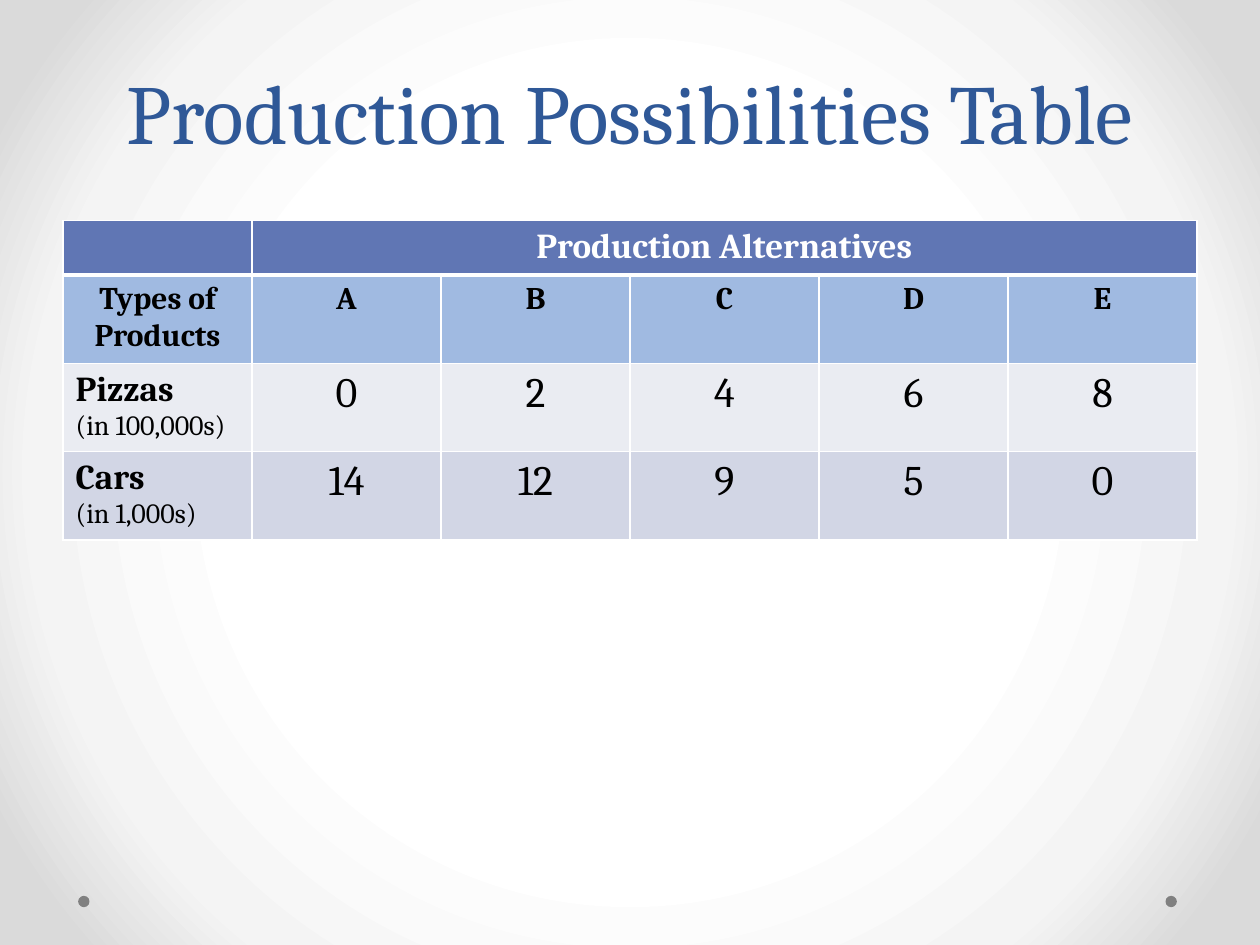
from lxml.etree import SubElement
from pptx import Presentation
from pptx.dml.color import RGBColor
from pptx.enum.shapes import MSO_SHAPE
from pptx.enum.text import MSO_ANCHOR, PP_ALIGN
from pptx.oxml.ns import qn
from pptx.util import Inches, Pt

FONT = "Cambria"
HEADINGS = ["Types of Products", "A", "B", "C", "D", "E"]
PRODUCTS = [
    ("Pizzas", "(in 100,000s)", [0, 2, 4, 6, 8], "EAECF2"),
    ("Cars", "(in 1,000s)", [14, 12, 9, 5, 0], "D2D6E5"),
]
ROW_HEIGHTS = [0.41, 0.67, 0.68, 0.68]


def color(value):
    """Turn a hex string into a colour."""
    return RGBColor.from_string(value)


def format_paragraph(paragraph, size, hex_color="000000", bold=False, align=PP_ALIGN.CENTER):
    """Apply alignment and font to a paragraph."""
    paragraph.alignment = align
    for run in paragraph.runs:
        run.font.name = FONT
        run.font.size = Pt(size)
        run.font.bold = bold
        run.font.color.rgb = color(hex_color)


def paint_background(slide):
    """Fill the slide with a circular gradient from white to grey."""
    slide.background.fill.gradient()
    gradient = slide.element.find(".//" + qn("a:gradFill"))
    for child in list(gradient):
        gradient.remove(child)
    stops = SubElement(gradient, qn("a:gsLst"))
    for position, value in [(50, "FFFFFF"), (76, "F4F4F4"), (92, "DADADA")]:
        stop = SubElement(stops, qn("a:gs"), pos=str(position * 1000))
        SubElement(stop, qn("a:srgbClr"), val=value)
    circle = SubElement(gradient, qn("a:path"), path="circle")
    SubElement(circle, qn("a:fillToRect"), {side: "50000" for side in "ltrb"})


def add_dots(slide, lefts, top, size):
    """Place the small grey dots along the foot of the slide."""
    for left in lefts:
        dot = slide.shapes.add_shape(
            MSO_SHAPE.OVAL, Inches(left), Inches(top), Inches(size), Inches(size)
        )
        dot.shadow.inherit = False
        dot.fill.solid()
        dot.fill.fore_color.rgb = color("808080")
        dot.line.fill.background()


def add_title(slide, left, top, width, height):
    """Place the title at the bottom of its box."""
    box = slide.shapes.add_textbox(Inches(left), Inches(top), Inches(width), Inches(height))
    frame = box.text_frame
    frame.word_wrap = True
    frame.vertical_anchor = MSO_ANCHOR.BOTTOM
    frame.text = "Production Possibilities Table"
    frame.paragraphs[0].line_spacing = Pt(58)
    format_paragraph(frame.paragraphs[0], 48, "2F5897")


def style_cell(cell, fill, bottom=1, top=1):
    """Give a cell its fill and white borders."""
    properties = cell._tc.get_or_add_tcPr()
    for side, width in [("L", 1), ("R", 1), ("T", top), ("B", bottom)]:
        line = SubElement(properties, qn(f"a:ln{side}"), w=str(Pt(width)))
        solid = SubElement(line, qn("a:solidFill"))
        SubElement(solid, qn("a:srgbClr"), val="FFFFFF")
    cell.fill.solid()
    cell.fill.fore_color.rgb = color(fill)


def write_cell(cell, text, size, bold=False):
    """Write one centred line of text in a cell."""
    cell.text_frame.text = text
    format_paragraph(cell.text_frame.paragraphs[0], size, bold=bold)


def add_possibilities_table(slide, left, top, width):
    """Place the table of production alternatives."""
    frame = slide.shapes.add_table(
        len(ROW_HEIGHTS), len(HEADINGS), Inches(left), Inches(top),
        Inches(width), Inches(sum(ROW_HEIGHTS)),
    )
    table = frame.table
    for row, height in zip(table.rows, ROW_HEIGHTS):
        row.height = Inches(height)

    for column, heading in enumerate(HEADINGS):
        style_cell(table.cell(0, column), "6076B4", bottom=3)
        style_cell(table.cell(1, column), "A0BAE1", top=3)
        write_cell(table.cell(1, column), heading, 18, bold=True)
    banner = table.cell(0, 1)
    banner.merge(table.cell(0, len(HEADINGS) - 1))
    banner.text_frame.text = "Production Alternatives"
    format_paragraph(banner.text_frame.paragraphs[0], 20, "FFFFFF", bold=True)

    for row, (name, unit, amounts, fill) in enumerate(PRODUCTS, start=2):
        label = table.cell(row, 0)
        style_cell(label, fill)
        label.text_frame.text = f"{name}\n{unit}"
        name_line, unit_line = label.text_frame.paragraphs
        format_paragraph(name_line, 20, bold=True, align=PP_ALIGN.LEFT)
        format_paragraph(unit_line, 16, align=PP_ALIGN.LEFT)
        for column, amount in enumerate(amounts, start=1):
            style_cell(table.cell(row, column), fill)
            write_cell(table.cell(row, column), str(amount), 24)


def main():
    """Build the slide and save it."""
    presentation = Presentation()
    presentation.slide_width = Inches(10)
    presentation.slide_height = Inches(7.5)
    slide = presentation.slides.add_slide(presentation.slide_layouts[6])
    paint_background(slide)
    add_dots(slide, [9.25, 0.62], 7.11, 0.09)
    add_title(slide, 0.5, 0, 9, 1.33)
    add_possibilities_table(slide, 0.5, 1.75, 9)
    presentation.save("out.pptx")


if __name__ == "__main__":
    main()
